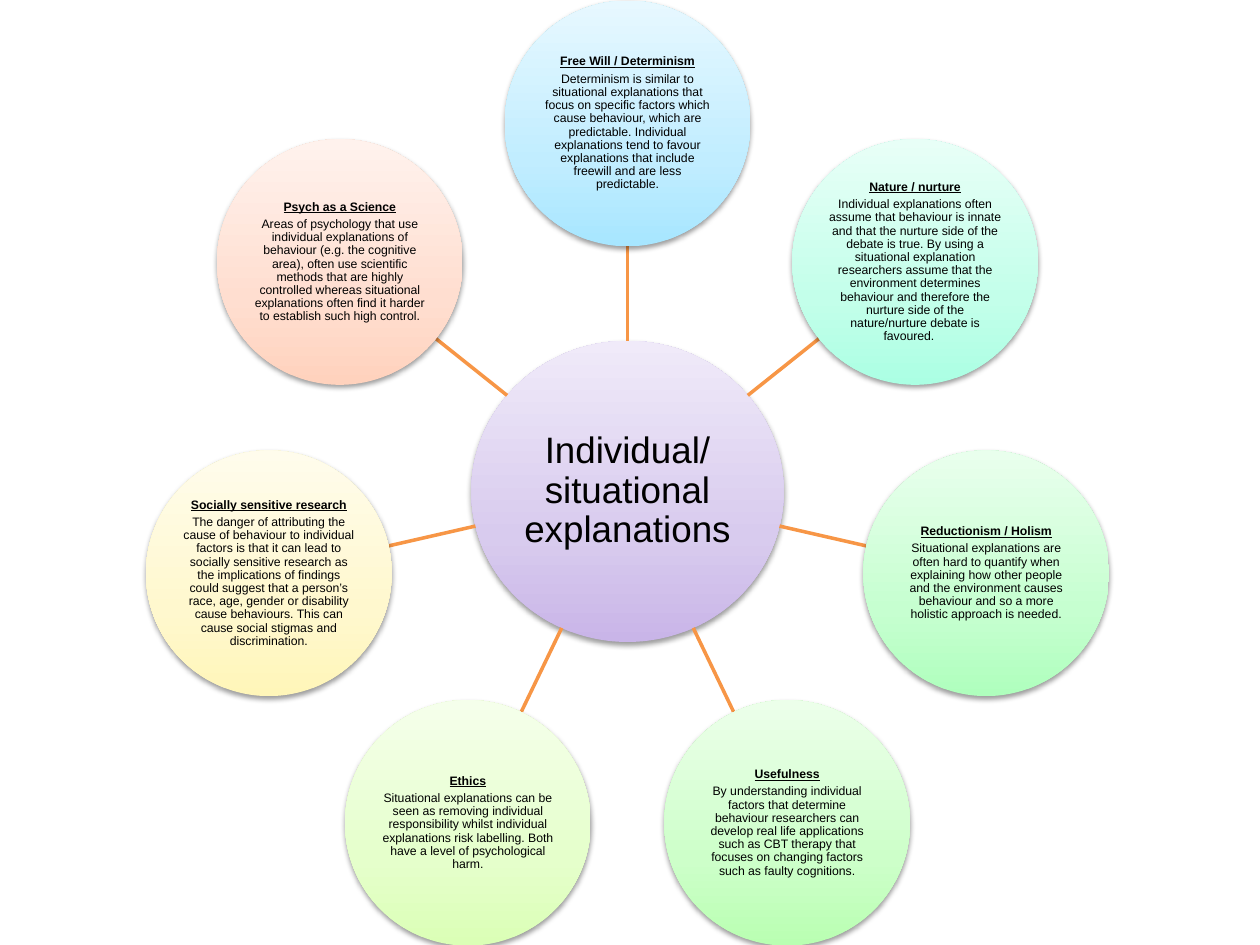
from dataclasses import dataclass
from math import cos, hypot, pi, sin

from pptx import Presentation
from pptx.dml.color import RGBColor
from pptx.enum.shapes import MSO_CONNECTOR, MSO_SHAPE
from pptx.enum.text import MSO_ANCHOR, PP_ALIGN
from pptx.oxml import parse_xml
from pptx.oxml.ns import nsdecls
from pptx.util import Inches, Pt


@dataclass(frozen=True)
class Theme:
    font: str = "Arial"
    text: RGBColor = RGBColor(0, 0, 0)
    spoke: RGBColor = RGBColor(0xF7, 0x96, 0x46)
    spoke_width: float = 2
    hub_size: float = 21
    topic_size: float = 7
    line_spacing: float = 0.9
    gap_ratio: float = 0.35


@dataclass(frozen=True)
class Circle:
    """Gradient colours run from the bottom of the circle to the top."""
    colours: tuple[str, str, str]
    heading: str
    body: str = ""


THEME = Theme()
CENTRE_X, CENTRE_Y = 4.98, 3.9
HUB_WIDTH, HUB_HEIGHT = 2.48, 2.39
TOPIC_SIZE = 1.95
RING_RADIUS = 2.92

HUB = Circle(("C9B5E8", "D8CBEE", "F0EAF9"), "Individual/ situational explanations")

# Topics clockwise from the top
TOPICS = [
    Circle(("A7E6FF", "C1EDFF", "E7F8FF"), "Free Will / Determinism",
           "Determinism is similar to situational explanations that focus on specific "
           "factors which cause behaviour, which are predictable. Individual explanations "
           "tend to favour explanations that include freewill and are less predictable."),
    Circle(("ABFFE3", "C3FFEA", "E8FFF7"), "Nature / nurture",
           "Individual explanations often assume that behaviour is innate and that the "
           "nurture side of the debate is true. By using a situational explanation "
           "researchers assume that the environment determines behaviour and therefore "
           "the nurture side of the nature/nurture debate is favoured.\t"),
    Circle(("AFFFBD", "C6FFD0", "E9FFED"), "Reductionism / Holism",
           "Situational explanations are often hard to quantify when explaining how other "
           "people and the environment causes behaviour and so a more holistic approach "
           "is needed."),
    Circle(("B9FFB2", "CDFFC9", "ECFFEA"), "Usefulness",
           "By understanding individual factors that determine behaviour researchers can "
           "develop real life applications such as CBT therapy that focuses on changing "
           "factors such as faulty cognitions."),
    Circle(("DBFFB6", "E5FFCB", "F5FFEB"), "Ethics",
           "Situational explanations can be seen as removing individual responsibility "
           "whilst individual explanations risk labelling. Both have a level of "
           "psychological harm."),
    Circle(("FFF6B9", "FFF8CE", "FFFCEC"), "Socially sensitive research",
           "The danger of attributing the cause of behaviour to individual factors is that "
           "it can lead to socially sensitive research as the implications of findings "
           "could suggest that a person’s race, age, gender or disability cause "
           "behaviours. This can cause social stigmas and discrimination."),
    Circle(("FFD2BD", "FFDED0", "FFF2ED"), "Psych as a Science",
           "Areas of psychology that use individual explanations of behaviour (e.g. the "
           "cognitive area), often use scientific methods that are highly controlled "
           "whereas situational explanations often find it harder to establish such high "
           "control."),
]


def style_circle(shape, colours: tuple[str, str, str]) -> None:
    """Give the shape a three-stop gradient, a soft shadow and no outline."""
    shape.line.fill.background()
    stops = "".join(
        f'<a:gs pos="{position}"><a:srgbClr val="{colour}"/></a:gs>'
        for position, colour in zip((0, 35000, 100000), colours))
    properties = shape._element.spPr
    properties.insert(2, parse_xml(
        f'<a:gradFill {nsdecls("a")} rotWithShape="1"><a:gsLst>{stops}</a:gsLst>'
        '<a:lin ang="16200000" scaled="0"/></a:gradFill>'))
    properties.append(parse_xml(
        f'<a:effectLst {nsdecls("a")}><a:outerShdw blurRad="{Pt(3.1)}" dist="{Pt(1.6)}" '
        'dir="5400000" rotWithShape="0"><a:srgbClr val="000000"><a:alpha val="38000"/>'
        '</a:srgbClr></a:outerShdw></a:effectLst>'))


def write_paragraph(para, text: str, size: float, heading: bool = False) -> None:
    para.text = text
    para.alignment = PP_ALIGN.CENTER
    para.line_spacing = THEME.line_spacing
    para.space_after = Pt(size * THEME.gap_ratio)
    font = para.font
    font.name, font.size = THEME.font, Pt(size)
    font.bold = font.underline = heading
    font.color.rgb = THEME.text


def draw_circle(page, circle: Circle, x: float, y: float, width: float, height: float,
                size: float, inset: float = 0) -> None:
    """Draw an ellipse centred on (x, y) with its text inside."""
    shape = page.shapes.add_shape(
        MSO_SHAPE.OVAL, Inches(x - width / 2), Inches(y - height / 2),
        Inches(width), Inches(height))
    style_circle(shape, circle.colours)
    frame = shape.text_frame
    frame.word_wrap = True
    frame.vertical_anchor = MSO_ANCHOR.MIDDLE
    frame.margin_left = frame.margin_right = Inches(inset)
    frame.margin_top = frame.margin_bottom = Inches(inset)
    write_paragraph(frame.paragraphs[0], circle.heading, size, heading=bool(circle.body))
    if circle.body:
        write_paragraph(frame.add_paragraph(), circle.body, size)


def ring_point(angle: float, radius: float) -> tuple[float, float]:
    """Point at a clockwise angle from the top, around the hub centre."""
    return CENTRE_X + radius * sin(angle), CENTRE_Y - radius * cos(angle)


def draw_spoke(page, angle: float) -> None:
    """Join the hub edge to the topic edge."""
    hub_edge = 1 / hypot(sin(angle) / (HUB_WIDTH / 2), cos(angle) / (HUB_HEIGHT / 2))
    start = ring_point(angle, hub_edge)
    end = ring_point(angle, RING_RADIUS - TOPIC_SIZE / 2)
    spoke = page.shapes.add_connector(
        MSO_CONNECTOR.STRAIGHT, *(Inches(length) for length in start + end))
    spoke.line.color.rgb = THEME.spoke
    spoke.line.width = Pt(THEME.spoke_width)
    spoke._element.spPr.append(parse_xml(f'<a:effectLst {nsdecls("a")}/>'))


def main() -> None:
    deck = Presentation()
    deck.slide_width, deck.slide_height = Inches(10), Inches(7.5)
    page = deck.slides.add_slide(deck.slide_layouts[6])

    # Hub
    draw_circle(page, HUB, CENTRE_X, CENTRE_Y, HUB_WIDTH, HUB_HEIGHT,
                THEME.hub_size, inset=0.01)

    # Ring of topics at equal angles
    for index, topic in enumerate(TOPICS):
        angle = 2 * pi * index / len(TOPICS)
        draw_spoke(page, angle)
        draw_circle(page, topic, *ring_point(angle, RING_RADIUS),
                    TOPIC_SIZE, TOPIC_SIZE, THEME.topic_size)

    deck.save("out.pptx")


if __name__ == "__main__":
    main()
